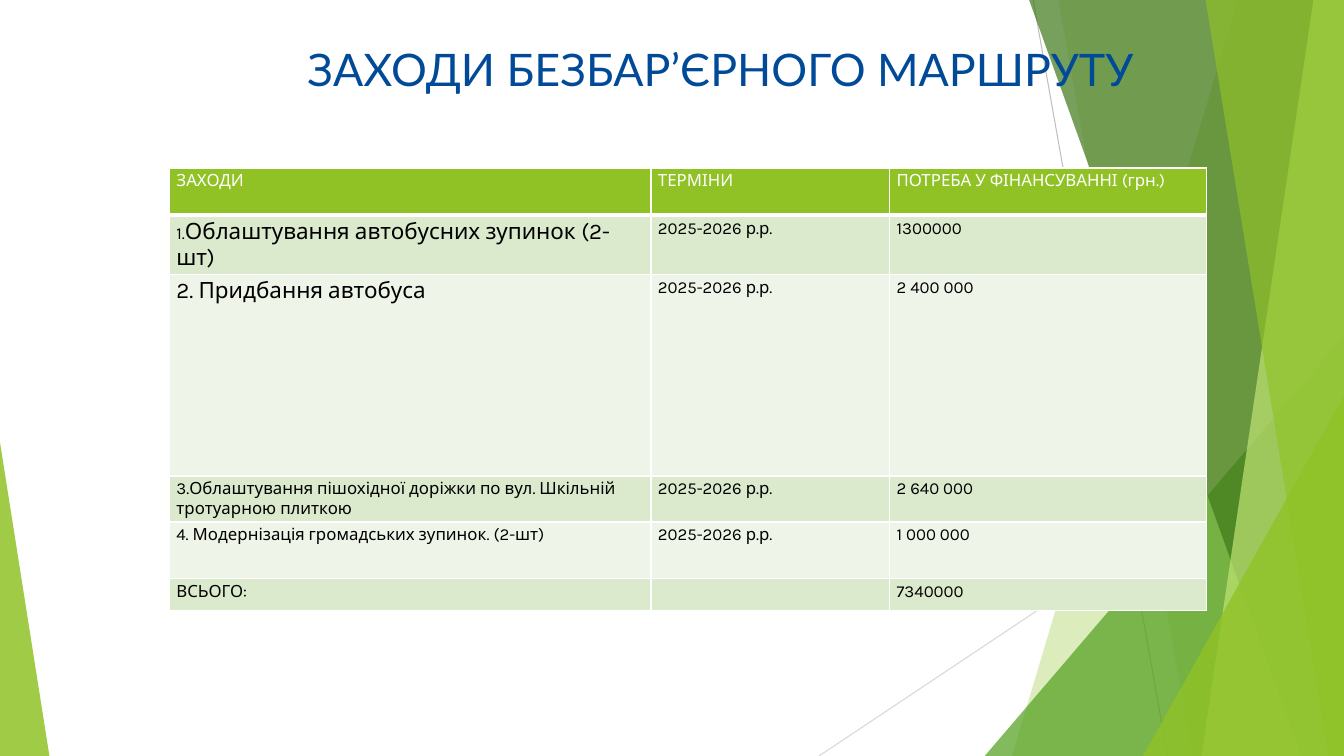
from dataclasses import dataclass

from lxml import etree
from pptx import Presentation
from pptx.dml.color import RGBColor
from pptx.enum.shapes import MSO_CONNECTOR, MSO_SHAPE
from pptx.enum.text import MSO_ANCHOR, PP_ALIGN
from pptx.oxml.ns import qn
from pptx.util import Pt

STRAIGHT = MSO_CONNECTOR.STRAIGHT
TRIANGLE = MSO_SHAPE.ISOSCELES_TRIANGLE
TOP, CENTER = MSO_ANCHOR.TOP, PP_ALIGN.CENTER
TITLE_ONLY = 5
PAGE_WIDTH, PAGE_HEIGHT = 960, 540


@dataclass(frozen=True)
class Theme:
    title_font: str = "Lato"
    body_font: str = "Karla"
    title_size: float = 32
    large_size: float = 16
    body_size: float = 12
    title: str = "004A98"
    white: str = "FFFFFF"
    black: str = "000000"
    lime: str = "90C226"
    green: str = "54A021"
    dark_green: str = "3F7819"
    pale_lime: str = "C0E474"
    row_odd: str = "DBE9CD"
    row_even: str = "EEF4E8"


THEME = Theme()


@dataclass(frozen=True)
class Ray:
    start: tuple[float, float]
    end: tuple[float, float]
    color: str


@dataclass(frozen=True)
class Band:
    """A strip from its slanted left edge to the right side of the page."""
    top_left: float
    bottom_left: float
    color: str
    opacity: int


@dataclass(frozen=True)
class Corner:
    """A right triangle standing on the bottom of the page."""
    left: float
    width: float
    height: float
    apex: float
    color: str
    opacity: int


@dataclass(frozen=True)
class Span:
    text: str
    size: float = THEME.body_size


@dataclass(frozen=True)
class Measure:
    height: float
    name: tuple[Span, ...]
    term: str
    cost: str


RAYS = [Ray((738, 0), (834, 540), "BFBFBF"), Ray((960, 290), (585, 540), "D9D9D9")]

FACETS = [
    Band(884.2, 722.9, THEME.lime, 30),
    Band(756, 851.8, THEME.lime, 20),
    Corner(703.4, 256.6, 300, 1, THEME.green, 72),
    Band(735.1, 929.5, THEME.dark_green, 70),
    Band(938.2, 858.2, THEME.pale_lime, 70),
    Band(861.1, 949, THEME.lime, 65),
    Corner(816.5, 143.5, 257, 1, THEME.lime, 80),
    Corner(0, 35.3, 224, 0, THEME.lime, 85),
]

COLUMN_WIDTHS = [344, 170.5, 226.5]
TERM = "2025-2026 р.р."
MEASURES = [
    Measure(33.8, (Span("ЗАХОДИ"),), "ТЕРМІНИ", "ПОТРЕБА У ФІНАНСУВАННІ (грн.)"),
    Measure(33.8, (Span("1."), Span("Облаштування автобусних зупинок (2-шт)", THEME.large_size)),
            TERM, "1300000"),
    Measure(144, (Span("2. Придбання автобуса", THEME.large_size),), TERM, "2 400 000"),
    Measure(23, (Span("3.Облаштування пішохідної доріжки по вул. Шкільній тротуарною плиткою"),),
            TERM, "2 640 000"),
    Measure(40.5, (Span("4. Модернізація громадських зупинок. (2-шт)"),), TERM, "1 000 000"),
    Measure(23, (Span("ВСЬОГО:"),), "", "7340000"),
]


def paint(shape, color: str, opacity: int) -> None:
    shape.shadow.inherit = False
    shape.line.fill.background()
    shape.fill.solid()
    shape.fill.fore_color.rgb = RGBColor.from_string(color)
    tint = shape._element.spPr.find(f"{qn('a:solidFill')}/{qn('a:srgbClr')}")
    etree.SubElement(tint, qn("a:alpha"), val=str(opacity * 1000))


def draw_ray(page, ray: Ray) -> None:
    line = page.shapes.add_connector(STRAIGHT, *map(Pt, ray.start + ray.end))
    line.line.color.rgb = RGBColor.from_string(ray.color)
    line.line.width = Pt(0.75)
    etree.SubElement(line._element.spPr, qn("a:effectLst"))


def draw_facet(page, facet: Band | Corner) -> None:
    if isinstance(facet, Band):
        builder = page.shapes.build_freeform(Pt(facet.top_left), 0)
        corners = [(PAGE_WIDTH, 0), (PAGE_WIDTH, PAGE_HEIGHT), (facet.bottom_left, PAGE_HEIGHT)]
        builder.add_line_segments([(Pt(x), Pt(y)) for x, y in corners], close=True)
        shape = builder.convert_to_shape()
    else:
        shape = page.shapes.add_shape(TRIANGLE, Pt(facet.left), Pt(PAGE_HEIGHT - facet.height),
                                      Pt(facet.width), Pt(facet.height))
        shape.adjustments[0] = facet.apex
    paint(shape, facet.color, facet.opacity)


def style_run(run, font: str, size: float, color: str) -> None:
    run.font.name = font
    run.font.size = Pt(size)
    run.font.color.rgb = RGBColor.from_string(color)


def draw_title(page, text: str) -> None:
    title = page.shapes.title
    page.shapes._spTree.append(title._element)  # bring in front of the facets
    title.left, title.top, title.width, title.height = Pt(70), Pt(13.5), Pt(890), Pt(48)
    frame = title.text_frame
    frame.text = text
    frame.vertical_anchor = TOP
    frame.margin_left = frame.margin_right = frame.margin_top = frame.margin_bottom = 0
    para = frame.paragraphs[0]
    para.alignment = CENTER
    para.line_spacing = Pt(54.5)
    style_run(para.runs[0], THEME.title_font, THEME.title_size, THEME.title)


def set_borders(cell, top: float, bottom: float) -> None:
    properties = cell._tc.get_or_add_tcPr()
    widths = {"a:lnL": 1, "a:lnR": 1, "a:lnT": top, "a:lnB": bottom}
    for index, (side, width) in enumerate(widths.items()):
        border = etree.Element(qn(side), w=str(Pt(width)))
        fill = etree.SubElement(border, qn("a:solidFill"))
        etree.SubElement(fill, qn("a:srgbClr"), val=THEME.white)
        properties.insert(index, border)


def fill_cell(cell, spans: tuple[Span, ...], color: str, background: str) -> None:
    cell.margin_left = cell.margin_right = Pt(5)
    cell.margin_top = cell.margin_bottom = Pt(2.4)
    cell.fill.solid()
    cell.fill.fore_color.rgb = RGBColor.from_string(background)
    para = cell.text_frame.paragraphs[0]
    for span in spans:
        run = para.add_run()
        run.text = span.text
        style_run(run, THEME.body_font, span.size, color)
    if not spans:
        para._p.get_or_add_endParaRPr().set("sz", str(int(THEME.body_size * 100)))


def draw_table(page, measures: list[Measure]) -> None:
    frame = page.shapes.add_table(len(measures), len(COLUMN_WIDTHS), Pt(121), Pt(120),
                                  Pt(sum(COLUMN_WIDTHS)), Pt(sum(m.height for m in measures)))
    table = frame.table
    for column, width in zip(table.columns, COLUMN_WIDTHS):
        column.width = Pt(width)
    for index, (row, measure) in enumerate(zip(table.rows, measures)):
        row.height = Pt(measure.height)
        header = index == 0
        background = THEME.lime if header else THEME.row_odd if index % 2 else THEME.row_even
        color = THEME.white if header else THEME.black
        plain = [(Span(text),) if text else () for text in (measure.term, measure.cost)]
        for cell, spans in zip(row.cells, [measure.name, *plain]):
            fill_cell(cell, spans, color, background)
            set_borders(cell, top=3 if index == 1 else 1, bottom=3 if header else 1)


def main() -> None:
    deck = Presentation()
    deck.slide_width, deck.slide_height = Pt(PAGE_WIDTH), Pt(PAGE_HEIGHT)
    page = deck.slides.add_slide(deck.slide_layouts[TITLE_ONLY])
    # Background decoration
    for ray in RAYS:
        draw_ray(page, ray)
    for facet in FACETS:
        draw_facet(page, facet)
    # Content
    draw_title(page, "ЗАХОДИ БЕЗБАР’ЄРНОГО МАРШРУТУ")
    draw_table(page, MEASURES)
    deck.save("out.pptx")


if __name__ == "__main__":
    main()
